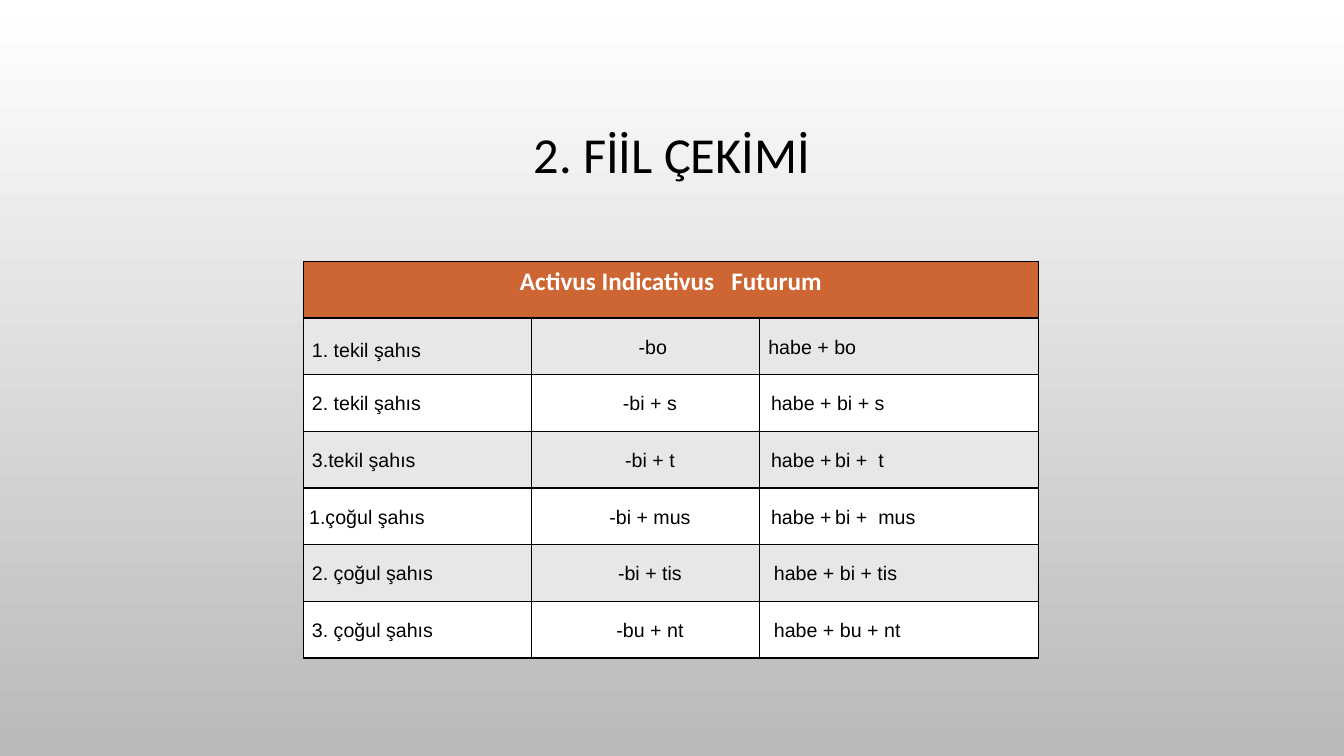
from lxml import etree
from pptx import Presentation
from pptx.dml.color import RGBColor
from pptx.enum import text
from pptx.oxml import ns
from pptx.util import Pt

BLACK = RGBColor(0x00, 0x00, 0x00)
WHITE = RGBColor(0xFF, 0xFF, 0xFF)
GREY = RGBColor(0xB9, 0xB9, 0xB9)
BAND = RGBColor(0xE7, 0xE7, 0xE7)
ORANGE = RGBColor(0xCE, 0x66, 0x33)

CENTER = text.PP_ALIGN.CENTER
LEFT = text.PP_ALIGN.LEFT
MIDDLE = text.MSO_ANCHOR.MIDDLE

COLUMN_WIDTHS = (163, 163, 199)
ROW_HEIGHT = 40.5
HEADER = "Activus Indicativus   Futurum"
# Each row: person, ending, example (split into spans), and the three left indents
CONJUGATION = [
    ("1. tekil şahıs", "-bo", ["habe + bo"], (6, 10, 6)),
    ("2. tekil şahıs", "-bi + s", ["habe + bi + s"], (6, 6, 8)),
    ("3.tekil şahıs", "-bi + t", ["habe +", " ", "bi +  t"], (6, 6, 8)),
    ("1.çoğul şahıs", "-bi + mus", ["habe +", " ", "bi +  mus"], (4, 6, 8)),
    ("2. çoğul şahıs", "-bi + tis", ["habe + bi + tis"], (6, 6, 10)),
    ("3. çoğul şahıs", "-bu + nt", ["habe + bu + nt"], (6, 6, 10)),
]


class SlideBuilder:
    heading_font = "Calibri"
    body_font = "Arial"

    def __init__(self, page):
        self.page = page

    def background(self, top, bottom):
        fill = self.page.background.fill
        fill.gradient()
        fill.gradient_angle = 270
        for stop, color in zip(fill.gradient_stops, (top, bottom)):
            stop.color.rgb = color

    def style(self, para, name, size, color, bold=False, align=LEFT, spacing=1.0):
        para.alignment = align
        para.line_spacing = spacing
        font = para.font
        font.name, font.size, font.bold = name, Pt(size), bold
        font.color.rgb = color

    def title(self, words, left, top, width, height):
        box = self.page.shapes.title
        box.left, box.top, box.width, box.height = map(Pt, (left, top, width, height))
        box.text_frame.text = words
        box.text_frame.vertical_anchor = MIDDLE
        self.style(box.text_frame.paragraphs[0], self.heading_font, 36, BLACK,
                   align=CENTER, spacing=0.9)

    def table(self, left, top, widths, row_count, row_height):
        frame = self.page.shapes.add_table(
            row_count, len(widths), Pt(left), Pt(top),
            Pt(sum(widths)), Pt(row_height * row_count))
        table = frame.table
        for column, width in zip(table.columns, widths):
            column.width = Pt(width)
        for row in table.rows:
            row.height = Pt(row_height)
        return table

    def paint(self, cell, color):
        """Fill a cell and rule all four of its sides."""
        cell.fill.solid()
        cell.fill.fore_color.rgb = color
        properties = cell._tc.get_or_add_tcPr()
        for index, side in enumerate(("lnL", "lnR", "lnT", "lnB")):
            line = etree.Element(ns.qn("a:" + side), w=str(Pt(1)))
            solid = etree.SubElement(line, ns.qn("a:solidFill"))
            etree.SubElement(solid, ns.qn("a:srgbClr"), val=str(BLACK))
            properties.insert(index, line)

    def header(self, cells, words):
        for cell in cells:
            self.paint(cell, ORANGE)
        cells[0].merge(cells[-1])
        cells[0].text = words
        self.style(cells[0].text_frame.paragraphs[0], self.heading_font, 18, WHITE,
                   bold=True, align=CENTER)

    def body_cell(self, cell, spans, color, indent, align, spacing):
        self.paint(cell, color)
        cell.vertical_anchor = MIDDLE
        cell.margin_left = cell.margin_right = cell.margin_top = cell.margin_bottom = 0
        para = cell.text_frame.paragraphs[0]
        para._p.get_or_add_pPr().set("marL", str(Pt(indent)))
        self.style(para, self.body_font, 14, BLACK, align=align, spacing=spacing)
        for words in spans:
            span = para.add_run()
            span.text = words
            if words == " ":
                span.font.size = Pt(9)


def main():
    deck = Presentation()
    deck.slide_width, deck.slide_height = Pt(960), Pt(540)
    builder = SlideBuilder(deck.slides.add_slide(deck.slide_layouts[5]))
    builder.background(WHITE, GREY)
    builder.title("2. FİİL ÇEKİMİ", 72, 49, 816, 126)

    table = builder.table(216.8, 186.6, COLUMN_WIDTHS, len(CONJUGATION) + 1, ROW_HEIGHT)
    builder.header(list(table.rows[0].cells), HEADER)
    for row, (person, ending, example, indents) in enumerate(CONJUGATION, start=1):
        color = BAND if row % 2 else WHITE
        for column, spans in enumerate(([person], [ending], example)):
            builder.body_cell(table.cell(row, column), spans, color, indents[column],
                              align=CENTER if column == 1 else LEFT,
                              spacing=1.4 if (row, column) == (1, 0) else 1.1)
    deck.save("out.pptx")


if __name__ == "__main__":
    main()
